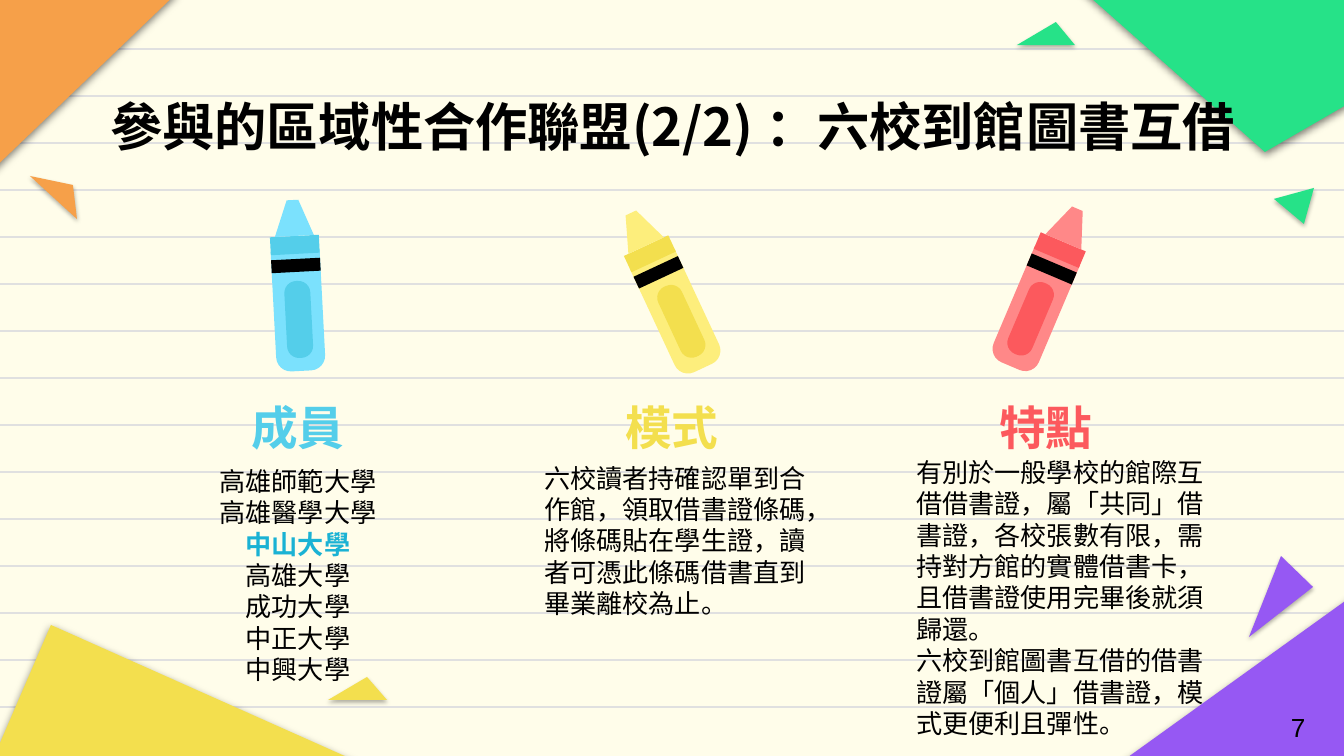
from lxml.etree import SubElement
from pptx import Presentation
from pptx.dml.color import RGBColor
from pptx.enum.shapes import MSO_CONNECTOR, MSO_SHAPE
from pptx.enum.text import MSO_ANCHOR, MSO_AUTO_SIZE, PP_ALIGN
from pptx.oxml.ns import qn
from pptx.util import Pt

EMU_PER_PX = 914400 / 134.4
FONT = "Noto Sans CJK SC"
COLORS = {
    "paper": "FFFDEA", "rule": "E0E0E0", "black": "000000", "highlight": "1AB2D4",
    "blue": "54CEEA", "light blue": "7BE1FD",
    "yellow": "F3DF4E", "light yellow": "FDEE7C",
    "red": "FC595D", "light red": "FF8888",
    "green": "26E288", "purple": "9658F3", "orange": "F6A049",
}
CORNERS = [
    ("yellow", [(394, 778), (51, 625), (-44, 845)]),
    ("green", [(1055, -34), (1265, 152), (1702, -101)]),
    ("purple", [(1060, 806), (1472, 805), (1355, 594)]),
    ("orange", [(-70, -99), (-17, 179), (177, -7)]),
]
CONFETTI = [
    ("purple", [(1249, 637), (1313, 587), (1281, 556)]),
    ("yellow", [(367, 677), (328, 700), (387, 700)]),
    ("green", [(1314, 188), (1274, 199), (1304, 224)]),
    ("green", [(1056, 22), (1017, 45), (1075, 45)]),
    ("orange", [(77, 219), (73, 185), (30, 176)]),
]
MEMBERS = ["高雄師範大學", "高雄醫學大學", "中山大學", "高雄大學",
           "成功大學", "中正大學", "中興大學"]
MODE = ["六校讀者持確認單到合作館，領取借書證條碼，將條碼貼在學生證，"
        "讀者可憑此條碼借書直到畢業離校為止。"]
FEATURES = ["有別於一般學校的館際互借借書證，屬「共同」借書證，各校張數有限，"
            "需持對方館的實體借書卡，且借書證使用完畢後就須歸還。",
            "六校到館圖書互借的借書證屬「個人」借書證，模式更便利且彈性。"]


def px(length):
    """Turn pixels into EMU."""
    return round(length * EMU_PER_PX)


def rgb(name):
    """Return a named colour."""
    return RGBColor.from_string(COLORS[name])


def paint(shape, color):
    """Give a shape a plain fill without line or shadow."""
    shape.shadow.inherit = False
    shape.fill.solid()
    shape.fill.fore_color.rgb = rgb(color)
    shape.line.fill.background()


def add_rule(slide, y):
    """Draw one line of the ruled paper."""
    rule = slide.shapes.add_connector(MSO_CONNECTOR.STRAIGHT, 0, px(y), px(1349), px(y))
    rule.line.color.rgb = rgb("rule")
    rule.line.width = Pt(0.75)
    SubElement(rule.element.spPr, qn("a:effectLst"))


def add_triangle(slide, color, points, blur, alpha):
    """Draw a paper triangle with a soft shadow below it."""
    builder = slide.shapes.build_freeform(*points[0], scale=EMU_PER_PX)
    builder.add_line_segments(points[1:], close=True)
    triangle = builder.convert_to_shape()
    paint(triangle, color)
    effects = triangle.element.spPr.find(qn("a:effectLst"))
    shadow = SubElement(effects, qn("a:outerShdw"), blurRad=str(Pt(blur)),
                        dist=str(Pt(1.5)), dir="5400000", algn="bl", rotWithShape="0")
    shade = SubElement(shadow, qn("a:srgbClr"), val=COLORS["black"])
    SubElement(shade, qn("a:alpha"), val=str(alpha * 1000))


def add_crayon(slide, center_x, center_y, angle, color):
    """Draw a crayon as a group turned around its centre."""
    light = "light " + color
    top = center_y - 86
    parts = [
        (MSO_SHAPE.ROUND_2_SAME_RECTANGLE, 51, 49, 120, light, [0, 0.3]),
        (MSO_SHAPE.RECTANGLE, 36, 49, 18, color, []),
        (MSO_SHAPE.ROUNDED_RECTANGLE, 81, 26, 77, color, [0.46]),
        (MSO_SHAPE.RECTANGLE, 59, 49, 13, "black", []),
        (MSO_SHAPE.TRAPEZOID, 0, 39, 36, light, [0.38]),
    ]
    group = slide.shapes.add_group_shape()
    for kind, offset, width, height, fill, adjustments in parts:
        part = group.shapes.add_shape(kind, px(center_x - width / 2), px(top + offset),
                                      px(width), px(height))
        for index, value in enumerate(adjustments):
            part.adjustments[index] = value
        paint(part, fill)
    group.rotation = angle


def write_text(shape, paragraphs, size, color="black", bold=False, font=FONT,
               align=PP_ALIGN.CENTER, anchor=MSO_ANCHOR.MIDDLE, wrap=True, highlight=None):
    """Fill a shape with formatted paragraphs."""
    frame = shape.text_frame
    frame.text = "\n".join(paragraphs)
    frame.auto_size = MSO_AUTO_SIZE.NONE if wrap else MSO_AUTO_SIZE.SHAPE_TO_FIT_TEXT
    frame.word_wrap = wrap
    frame.vertical_anchor = anchor
    frame.margin_left = frame.margin_right = px(13)
    frame.margin_top = frame.margin_bottom = px(13 if wrap else 7)
    for paragraph in frame.paragraphs:
        marked = paragraph.text == highlight
        paragraph.alignment = align
        paragraph.line_spacing = Pt(size * 1.2)
        for run in paragraph.runs:
            run.font.size = Pt(size)
            run.font.bold = bold or marked
            run.font.color.rgb = rgb("highlight" if marked else color)
            run.font.name = font
            SubElement(run.font._element, qn("a:ea"), typeface=font)


def add_text(slide, box, paragraphs, **style):
    """Add a text box at a place given in pixels."""
    shape = slide.shapes.add_textbox(*map(px, box))
    write_text(shape, paragraphs, **style)


def add_title(slide, box, text):
    """Place the title above the paper corners."""
    title = slide.shapes.title
    title.left, title.top, title.width, title.height = map(px, box)
    write_text(title, [text], size=28, bold=True, anchor=MSO_ANCHOR.TOP)
    title.element.getparent().append(title.element)


def main():
    """Build the slide and save it."""
    presentation = Presentation()
    presentation.slide_width, presentation.slide_height = px(1344), px(756)
    slide = presentation.slides.add_slide(presentation.slide_layouts[5])
    slide.background.fill.solid()
    slide.background.fill.fore_color.rgb = rgb("paper")

    for row in range(15):
        add_rule(slide, 49 + 47 * row)
    for color, points in CORNERS:
        add_triangle(slide, color, points, blur=4.5, alpha=50)
    add_title(slide, (78, 81, 1189, 85), "參與的區域性合作聯盟(2/2) ：六校到館圖書互借")

    columns = [
        ("成員", "blue", (297, 286, 357), (138, 458, 320, 234), MEMBERS, PP_ALIGN.CENTER),
        ("模式", "yellow", (667, 291, 335), (531, 457, 313, 167), MODE, PP_ALIGN.LEFT),
        ("特點", "red", (1044, 288, 23), (903, 466, 337, 263), FEATURES, PP_ALIGN.LEFT),
    ]
    for index, (heading, color, crayon, box, paragraphs, align) in enumerate(columns):
        add_text(slide, (138 + 374 * index, 388, 320, 78), [heading],
                 size=25, color=color, bold=True)
        add_text(slide, box, paragraphs, size=14, align=align, highlight="中山大學")
        add_crayon(slide, *crayon, color)

    for color, points in CONFETTI:
        add_triangle(slide, color, points, blur=2.2, alpha=30)
    add_text(slide, (1278, 704, 42, 46), ["7"], size=14, font="Arial",
             align=PP_ALIGN.LEFT, anchor=MSO_ANCHOR.TOP, wrap=False)
    presentation.save("out.pptx")


if __name__ == "__main__":
    main()
